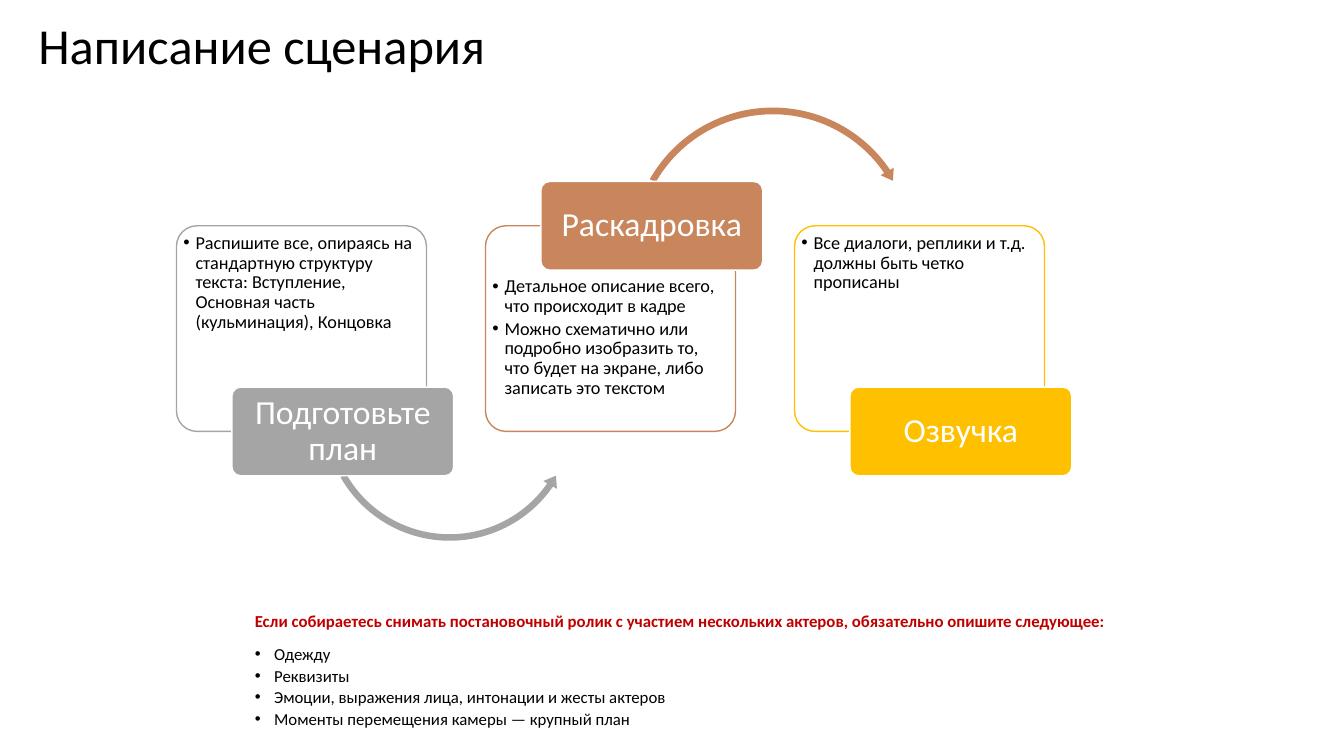
from lxml.etree import SubElement
from pptx import Presentation
from pptx.dml.color import RGBColor
from pptx.enum.shapes import MSO_SHAPE
from pptx.enum.text import MSO_ANCHOR, MSO_AUTO_SIZE, PP_ALIGN
from pptx.oxml.ns import qn
from pptx.util import Inches, Pt

COLORS = {
    "black": "000000", "white": "FFFFFF", "warning": "C00000",
    "plan": "A5A5A5", "storyboard": "C9855C", "voice": "FFC000",
}
FONT = "Calibri"
FIRST_LEFT, STEP = 1.75, 3.065
PANEL_TOP, PANEL_WIDTH, PANEL_HEIGHT = 2.24, 2.48, 2.04
LABEL_WIDTH, LABEL_HEIGHT, LABEL_SHIFT = 2.2, 0.88, 0.55

# Each arrow: preset, centre relative to its panel, diameter, adjustments
STAGES = [
    {
        "label": "Подготовьте план", "color": "plan", "label_on_top": False,
        "points": ["Распишите все, опираясь на стандартную структуру текста: "
                   "Вступление, Основная часть (кульминация), Концовка"],
        "arrow": (MSO_SHAPE.LEFT_CIRCULAR_ARROW, 2.71, 1.88, 2.58,
                  (0.025, 3.094, 20.849, 90.245, 0.03)),
    },
    {
        "label": "Раскадровка", "color": "storyboard", "label_on_top": True,
        "points": ["Детальное описание всего, что происходит в кадре",
                   "Можно схематично или подробно изобразить то, что будет "
                   "на экране, либо записать это текстом"],
        "arrow": (MSO_SHAPE.CIRCULAR_ARROW, 2.85, 0.23, 2.89,
                  (0.023, 2.738, 195.507, 125.755, 0.026)),
    },
    {
        "label": "Озвучка", "color": "voice", "label_on_top": False,
        "points": ["Все диалоги, реплики и т.д. должны быть четко прописаны"],
        "arrow": None,
    },
]
WARNING = ("Если собираетесь снимать постановочный ролик с участием "
           "нескольких актеров, обязательно опишите следующее:")
DETAILS = ["Одежду", "Реквизиты",
           "Эмоции, выражения лица, интонации и жесты актеров",
           "Моменты перемещения камеры — крупный план"]


def rgb(name):
    return RGBColor.from_string(COLORS[name])


def write(frame, text, size, color="black", bold=False, align=PP_ALIGN.LEFT,
          spacing=0.9, after=0, bullet_indent=None):
    """Fill the frame's empty first paragraph, or append another one."""
    first = frame.paragraphs[0]
    paragraph = frame.add_paragraph() if first.runs else first
    if bullet_indent:
        props = paragraph._p.get_or_add_pPr()
        props.set("marL", str(Inches(bullet_indent)))
        props.set("indent", str(-Inches(bullet_indent)))
        SubElement(props, qn("a:buFont"), typeface="Arial")
        SubElement(props, qn("a:buChar"), char="•")
    paragraph.alignment = align
    paragraph.line_spacing = spacing
    paragraph.space_before = Pt(0)
    paragraph.space_after = Pt(after)
    run = paragraph.add_run()
    run.text = text
    run.font.name, run.font.size, run.font.bold = FONT, Pt(size), bold
    run.font.color.rgb = rgb(color)


def set_frame(frame, anchor, left, top, right, bottom):
    frame.word_wrap = True
    frame.vertical_anchor = anchor
    frame.margin_left, frame.margin_top = Inches(left), Inches(top)
    frame.margin_right, frame.margin_bottom = Inches(right), Inches(bottom)


def add_filled(slide, preset, box, adjustments, fill, line=None):
    shape = slide.shapes.add_shape(preset, *map(Inches, box))
    shape.shadow.inherit = False
    for index, value in enumerate(adjustments):
        shape.adjustments[index] = value
    shape.fill.solid()
    shape.fill.fore_color.rgb = rgb(fill)
    if line:
        shape.line.color.rgb = rgb(line)
        shape.line.width = Pt(1)
    else:
        shape.line.fill.background()
    return shape


def add_panel(slide, left, stage):
    panel = add_filled(slide, MSO_SHAPE.ROUNDED_RECTANGLE,
                       (left, PANEL_TOP, PANEL_WIDTH, PANEL_HEIGHT),
                       [0.1], "white", stage["color"])
    fill_color = panel._element.spPr.find(qn("a:solidFill"))[0]
    SubElement(fill_color, qn("a:alpha"), val="90000")
    top_margin = 0.45 if stage["label_on_top"] else 0.02
    set_frame(panel.text_frame, MSO_ANCHOR.TOP, 0.01, top_margin, 0.03, 0.02)
    for point in stage["points"]:
        write(panel.text_frame, point, 13, after=2, bullet_indent=0.12)


def add_arrow(slide, left, stage):
    preset, center_x, center_y, diameter, adjustments = stage["arrow"]
    box = (left + center_x - diameter / 2,
           PANEL_TOP + center_y - diameter / 2, diameter, diameter)
    add_filled(slide, preset, box, adjustments, stage["color"])


def add_label(slide, left, stage):
    edge = PANEL_TOP + (0 if stage["label_on_top"] else PANEL_HEIGHT)
    box = (left + LABEL_SHIFT, edge - LABEL_HEIGHT / 2,
           LABEL_WIDTH, LABEL_HEIGHT)
    label = add_filled(slide, MSO_SHAPE.ROUNDED_RECTANGLE, box, [0.1],
                       stage["color"], "white")
    set_frame(label.text_frame, MSO_ANCHOR.MIDDLE, 0.05, 0.03, 0.05, 0.03)
    write(label.text_frame, stage["label"], 24, "white",
          align=PP_ALIGN.CENTER)


def add_title(slide, text):
    title = slide.shapes.title
    title.left, title.top = Inches(0.28), Inches(-0.25)
    title.width, title.height = Inches(11.5), Inches(1.45)
    title.text_frame.auto_size = MSO_AUTO_SIZE.NONE
    set_frame(title.text_frame, MSO_ANCHOR.MIDDLE, 0.1, 0.05, 0.1, 0.05)
    write(title.text_frame, text, 36)


def add_advice(slide):
    advice = slide.shapes.add_textbox(
        *map(Inches, (2.43, 6, 9.59, 1.28))).text_frame
    set_frame(advice, MSO_ANCHOR.TOP, 0.1, 0.05, 0.1, 0.05)
    write(advice, WARNING, 12, "warning", bold=True, spacing=1.07, after=8)
    for detail in DETAILS:
        write(advice, detail, 12, spacing=1.07, bullet_indent=0.19)


def main():
    deck = Presentation()
    deck.slide_width, deck.slide_height = Inches(13.33), Inches(7.5)
    slide = deck.slides.add_slide(deck.slide_layouts[5])
    add_title(slide, "Написание сценария")
    for column, stage in enumerate(STAGES):
        left = FIRST_LEFT + column * STEP
        add_panel(slide, left, stage)
        if stage["arrow"]:
            add_arrow(slide, left, stage)
        add_label(slide, left, stage)
    add_advice(slide)
    deck.save("out.pptx")


if __name__ == "__main__":
    main()
